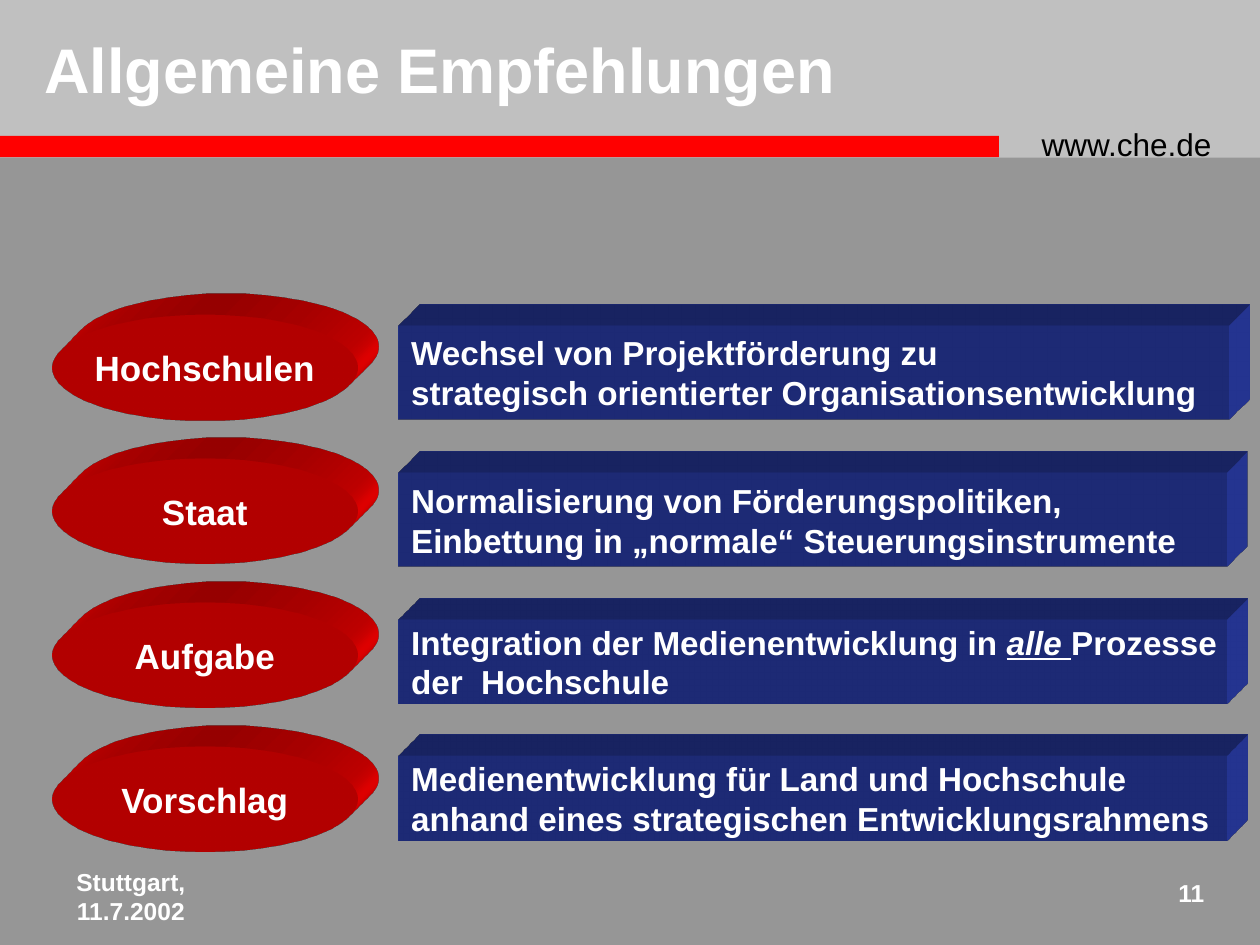
from lxml.etree import fromstring
from pptx import Presentation
from pptx.dml.color import RGBColor
from pptx.enum.shapes import MSO_SHAPE
from pptx.enum.text import MSO_ANCHOR, PP_ALIGN
from pptx.util import Cm, Pt

TITLE = "Allgemeine Empfehlungen"
RED, BLUE, WHITE, BLACK = "FF0000", "293BA5", "FFFFFF", "000000"
BANDS = [((0, 0, 25.4, 3.18), "C0C0C0"), ((0, 2.74, 20.14, 0.43), RED)]
LABELS = [
    ((20.75, 2.39, 4.45, 1.02), ["www.che.de"], 18, BLACK, False, PP_ALIGN.LEFT),
    ((0, 17.35, 5.28, 1.27), ["Stuttgart,", "11.7.2002"], 14, WHITE, True, PP_ALIGN.CENTER),
    ((23.06, 17.58, 1.47, 1.07), ["11"], 14, WHITE, True, PP_ALIGN.RIGHT),
]
ROWS = [
    ("Hochschulen", 6.56, 16.72, 1.9,
     ["Wechsel von Projektförderung zu",
      "strategisch orientierter Organisationsentwicklung"]),
    ("Staat", 9.53, 16.68, 1.9,
     ["Normalisierung von Förderungspolitiken,",
      "Einbettung in „normale“ Steuerungsinstrumente"]),
    ("Aufgabe", 12.49, 16.68, 1.7,
     [["Integration der Medienentwicklung in ", ("alle ",), "Prozesse"],
      "der  Hochschule"]),
    ("Vorschlag", 15.24, 16.68, 1.7,
     ["Medienentwicklung für Land und Hochschule",
      "anhand eines strategischen Entwicklungsrahmens"]),
]
OVAL_TOP, OVAL_STEP = 6.35, 2.9
NS = "http://schemas.openxmlformats.org/drawingml/2006/main"


def rgb(value):
    return RGBColor.from_string(value)


def write(tf, lines, size, color=WHITE, bold=True, align=PP_ALIGN.LEFT):
    """Fill a text frame; a tuple inside a line marks an emphasised run."""
    for i, line in enumerate(lines):
        p = tf.add_paragraph() if i else tf.paragraphs[0]
        p.alignment = align
        for part in [line] if isinstance(line, str) else line:
            r = p.add_run()
            r.text = part if isinstance(part, str) else part[0]
            r.font.name, r.font.size, r.font.bold = "Arial", Pt(size), bold
            r.font.color.rgb = rgb(color)
            if isinstance(part, tuple):
                r.font.italic = r.font.underline = True


def add_block(s, kind, box, color):
    sp = s.shapes.add_shape(kind, *map(Cm, box))
    sp.shadow.inherit = False
    sp.fill.solid()
    sp.fill.fore_color.rgb = rgb(color)
    sp.line.fill.background()
    return sp


def extrude(sp, color):
    """Give a shape depth towards the upper right."""
    for xml in (
        f'<a:scene3d xmlns:a="{NS}"><a:camera prst="legacyObliqueTopRight"/>'
        '<a:lightRig rig="legacyFlat3" dir="b"/></a:scene3d>',
        f'<a:sp3d xmlns:a="{NS}" extrusionH="430200" prstMaterial="legacyMatte">'
        f'<a:extrusionClr><a:srgbClr val="{color}"/></a:extrusionClr></a:sp3d>',
    ):
        sp.element.spPr.append(fromstring(xml))


def add_solid(s, kind, box, color, lines, size, align):
    sp = add_block(s, kind, box, color)
    extrude(sp, color)
    tf = sp.text_frame
    tf.word_wrap = False
    tf.vertical_anchor = MSO_ANCHOR.MIDDLE
    write(tf, lines, size, align=align)


def main():
    prs = Presentation()
    prs.slide_width, prs.slide_height = Cm(25.4), Cm(19.05)
    s = prs.slides.add_slide(prs.slide_layouts[5])
    s.background.fill.solid()
    s.background.fill.fore_color.rgb = rgb("969696")

    for box, color in BANDS:
        add_block(s, MSO_SHAPE.RECTANGLE, box, color)

    title = s.shapes.title
    title.left, title.top, title.width, title.height = map(Cm, (0.64, 0.42, 19.69, 1.9))
    title.text_frame.vertical_anchor = MSO_ANCHOR.MIDDLE
    write(title.text_frame, [TITLE], 36)
    s.shapes._spTree.append(title.element)

    for box, lines, size, color, bold, align in LABELS:
        tf = s.shapes.add_textbox(*map(Cm, box)).text_frame
        tf.word_wrap = True
        write(tf, lines, size, color, bold, align)

    for i, (name, top, width, height, lines) in enumerate(ROWS):
        add_solid(s, MSO_SHAPE.RECTANGLE, (8.04, top, width, height),
                  BLUE, lines, 19, PP_ALIGN.LEFT)
        add_solid(s, MSO_SHAPE.OVAL, (1.06, OVAL_TOP + i * OVAL_STEP, 6.14, 2.12),
                  RED, [name], 20, PP_ALIGN.CENTER)

    prs.save("out.pptx")


if __name__ == "__main__":
    main()
